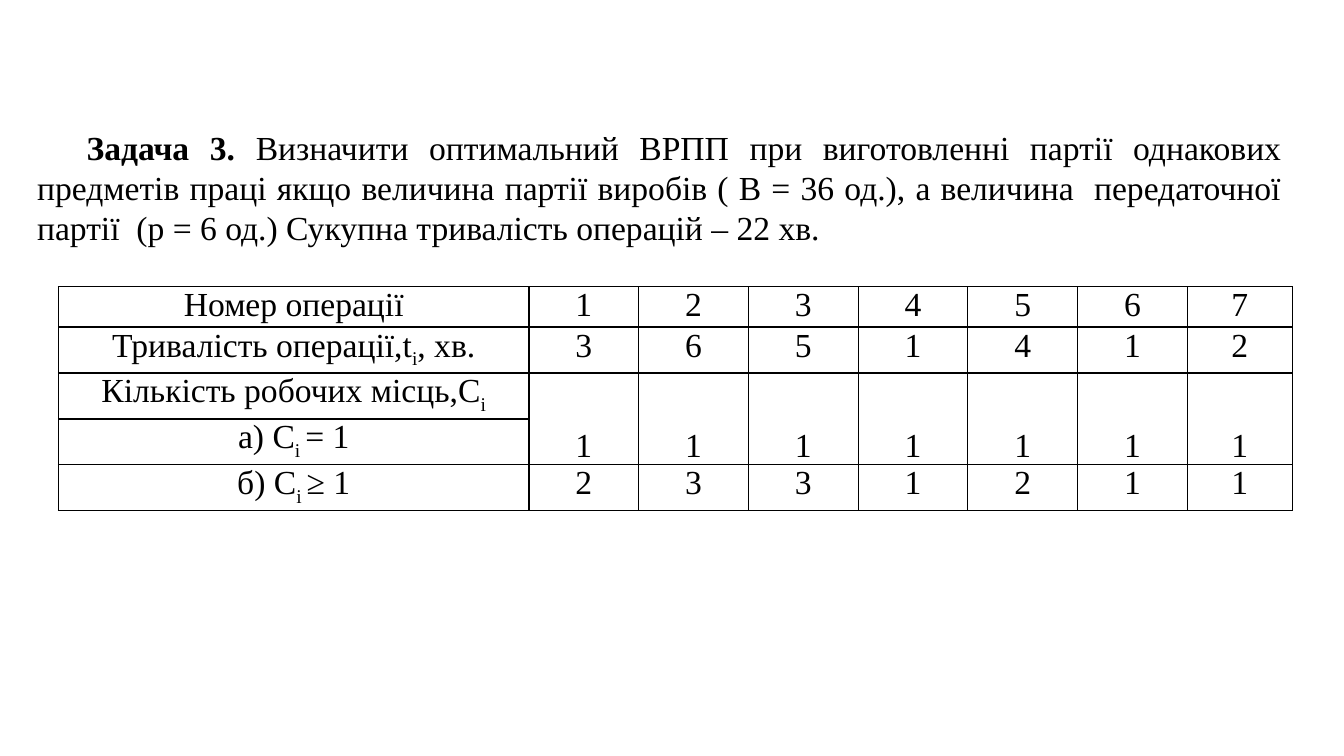
"""Build the slide with task 3: the problem statement and the table of operations."""
from dataclasses import dataclass

import lxml.etree
import pptx
import pptx.dml.color
import pptx.enum.text
import pptx.oxml.ns
import pptx.util

Pt = pptx.util.Pt
ALIGN = pptx.enum.text.PP_ALIGN
ANCHOR = pptx.enum.text.MSO_ANCHOR
qn = pptx.oxml.ns.qn


@dataclass(frozen=True)
class Theme:
    font: str = "Times New Roman"
    size: int = 24
    ink: str = "000000"
    border: int = 1
    subscript: str = "-25000"


theme = Theme()


def style_paragraph(p, align):
    p.alignment = align
    p.font.name = theme.font
    p.font.size = Pt(theme.size)
    p.font.color.rgb = pptx.dml.color.RGBColor.from_string(theme.ink)


def add_borders(cell):
    tc_pr = cell._tc.get_or_add_tcPr()
    for side in ("lnL", "lnR", "lnT", "lnB"):
        ln = lxml.etree.SubElement(tc_pr, qn(f"a:{side}"), w=str(Pt(theme.border)))
        fill = lxml.etree.SubElement(ln, qn("a:solidFill"))
        lxml.etree.SubElement(fill, qn("a:srgbClr"), val=theme.ink)


prs = pptx.Presentation()
prs.slide_width, prs.slide_height = Pt(960), Pt(540)
s = prs.slides.add_slide(prs.slide_layouts[6])

statement = [
    ("Задача 3. ", True),
    ("Визначити оптимальний ВРПП при виготовленні партії однакових предметів праці "
     "якщо величина партії виробів ( В = 36 од.), а величина  передаточної партії  "
     "(p = 6 од.) Сукупна тривалість операцій – 22 хв.", False),
]
tf = s.shapes.add_textbox(Pt(19.4), Pt(86.4), Pt(902.9), Pt(94.3)).text_frame
tf.word_wrap = True
tf.vertical_anchor = ANCHOR.MIDDLE
p = tf.paragraphs[0]
style_paragraph(p, ALIGN.JUSTIFY)
p._p.get_or_add_pPr().set("indent", str(Pt(35.4)))
for text, bold in statement:
    r = p.add_run()
    r.text = text
    r.font.bold = bold

operations = [
    (["Номер операції"], [1, 2, 3, 4, 5, 6, 7]),
    (["Тривалість операції,t", "i", ", хв."], [3, 6, 5, 1, 4, 1, 2]),
    (["Кількість робочих місць,С", "і"], [1, 1, 1, 1, 1, 1, 1]),
    (["а) С", "і ", "= 1"], []),
    (["б) С", "і ", "≥ 1"], [2, 3, 3, 1, 2, 1, 1]),
]
places_row, single_place_row = 2, 3
col_widths = [336] + [78.4] * 6 + [74.9]
row_heights = [26.5] + [30.5] * 4

table = s.shapes.add_table(
    len(row_heights), len(col_widths), Pt(41.8), Pt(204.8),
    Pt(sum(col_widths)), Pt(sum(row_heights))).table
table.first_row = table.horz_banding = False
for column, width in zip(table.columns, col_widths):
    column.width = Pt(width)

for row, height, (label_parts, values) in zip(table.rows, row_heights, operations):
    row.height = Pt(height)
    for cell in row.cells:
        cell.margin_left = cell.margin_right = Pt(5)
        cell.margin_top = cell.margin_bottom = Pt(0)
        add_borders(cell)
        cell.fill.background()
        style_paragraph(cell.text_frame.paragraphs[0], ALIGN.CENTER)

    contents = [label_parts] + [[str(value)] for value in values]
    for cell, parts in zip(row.cells, contents):
        for position, part in enumerate(parts):
            r = cell.text_frame.paragraphs[0].add_run()
            r.text = part
            is_subscript = position == 1
            if is_subscript:
                r._r.get_or_add_rPr().set("baseline", theme.subscript)

for col in range(1, len(col_widths)):
    count_cell = table.cell(places_row, col)
    count_cell.merge(table.cell(single_place_row, col))
    count_cell.vertical_anchor = ANCHOR.BOTTOM

prs.save("out.pptx")
